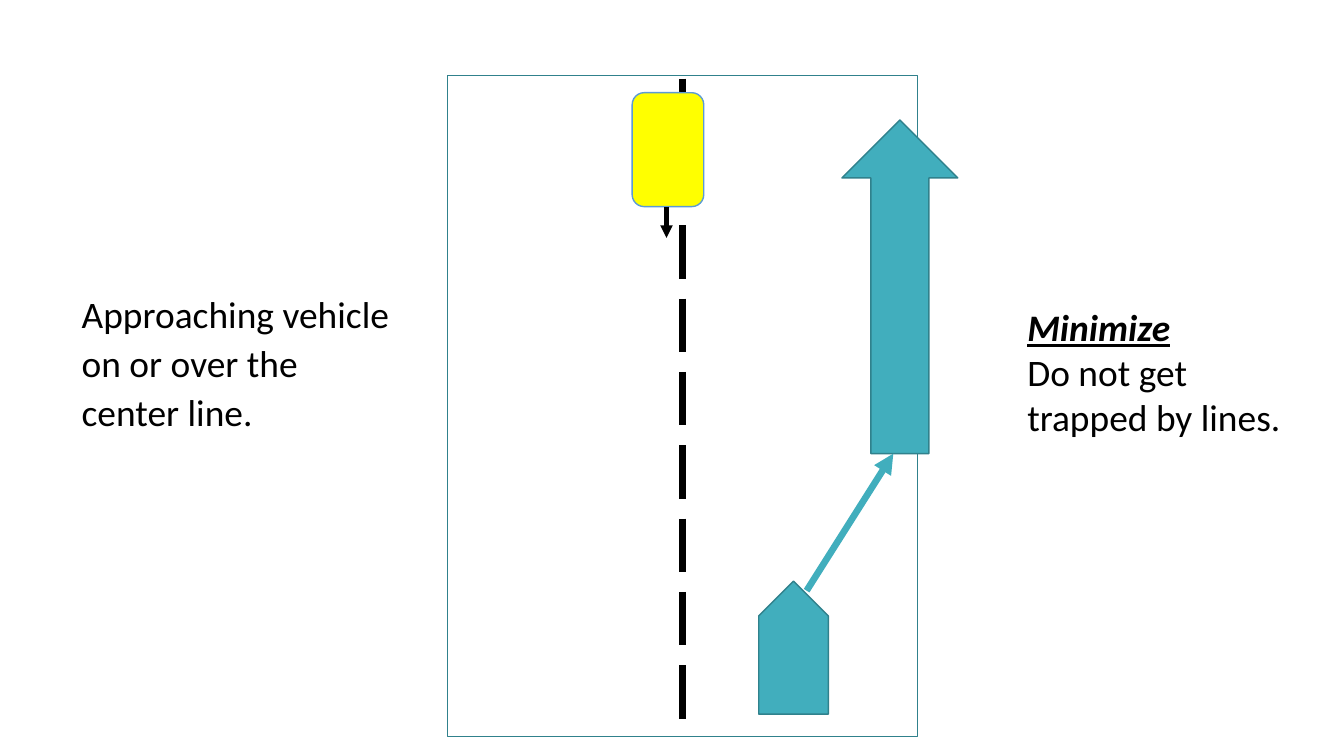
from dataclasses import dataclass

from pptx import Presentation
from pptx.dml.color import RGBColor as Rgb
from pptx.enum.dml import MSO_LINE as Dash
from pptx.enum.shapes import MSO_CONNECTOR as Link, MSO_SHAPE as Kind
from pptx.oxml.ns import qn
from pptx.util import Inches, Pt
from lxml.etree import SubElement


@dataclass(frozen=True)
class Theme:
    font: str = "Calibri"
    size: float = 26.7
    white: str = "FFFFFF"
    black: str = "000000"
    teal: str = "41AEBD"
    edge: str = "30818C"
    yellow: str = "FFFF00"
    blue: str = "5B9BD5"
    thin: float = 1
    mid: float = 3
    thick: float = 4.75


THEME = Theme()


def color(code):
    return Rgb.from_string(code)


def add_text(slide, box, lines, indent=0, spacing=None):
    """Add a wrapped text box; lines holds (text, strong) pairs."""
    frame = slide.shapes.add_textbox(*map(Inches, box)).text_frame
    frame.word_wrap = True
    frame.margin_left = Inches(0.1 + indent)
    for i, (text, strong) in enumerate(lines):
        para = frame.add_paragraph() if i else frame.paragraphs[0]
        para.text = text
        para.line_spacing = spacing
        font = para.font
        font.name, font.size = THEME.font, Pt(THEME.size)
        font.color.rgb = color(THEME.black)
        font.bold = font.italic = font.underline = strong


def add_block(slide, kind, box, fill, edge=THEME.edge, turn=0):
    """Add a filled and outlined preset shape."""
    shape = slide.shapes.add_shape(kind, *map(Inches, box))
    shape.shadow.inherit = False
    shape.rotation = turn
    shape.fill.solid()
    shape.fill.fore_color.rgb = color(fill)
    shape.line.color.rgb = color(edge)
    shape.line.width = Pt(THEME.thin)


def add_line(slide, start, end, tint, width, dash=None, arrow=False):
    """Add a straight line, dashed or with an arrowhead at its end."""
    link = slide.shapes.add_connector(
        Link.STRAIGHT, *map(Inches, (*start, *end)))
    link.line.color.rgb = color(tint)
    link.line.width = Pt(width)
    if dash:
        link.line.dash_style = dash
    if arrow:
        SubElement(link.line._get_or_add_ln(), qn("a:tailEnd"), type="triangle")
    SubElement(link._element.spPr, qn("a:effectLst"))


def main():
    deck = Presentation()
    deck.slide_width, deck.slide_height = Inches(13.33), Inches(7.5)
    slide = deck.slides.add_slide(deck.slide_layouts[6])

    # Captions
    add_text(slide, (0.64, 2.79, 3.4, 1.93),
             [("Approaching vehicle on or over the center line.", False)],
             indent=0.07, spacing=1.1)
    add_text(slide, (10.09, 2.97, 2.79, 1.45),
             [("Minimize", True), ("Do not get trapped by lines.", False)])

    # Road and center line
    add_block(slide, Kind.RECTANGLE, (4.44, 0.75, 4.66, 6.56), THEME.white)
    add_line(slide, (6.77, 0.78), (6.77, 7.28), THEME.black, THEME.thick,
             dash=Dash.LONG_DASH)

    # Vehicles and escape path
    add_block(slide, Kind.ROUNDED_RECTANGLE, (6.27, 0.92, 0.71, 1.13),
              THEME.yellow, THEME.blue)
    add_block(slide, Kind.PENTAGON, (7.21, 6.08, 1.32, 0.69), THEME.teal,
              turn=270)
    add_block(slide, Kind.UP_ARROW, (8.35, 1.19, 1.15, 3.31), THEME.teal)

    # Directions of travel
    add_line(slide, (8, 5.86), (8.86, 4.5), THEME.teal, THEME.thick, arrow=True)
    add_line(slide, (6.61, 2.05), (6.61, 2.36), THEME.black, THEME.mid,
             arrow=True)

    deck.save("out.pptx")


if __name__ == "__main__":
    main()
